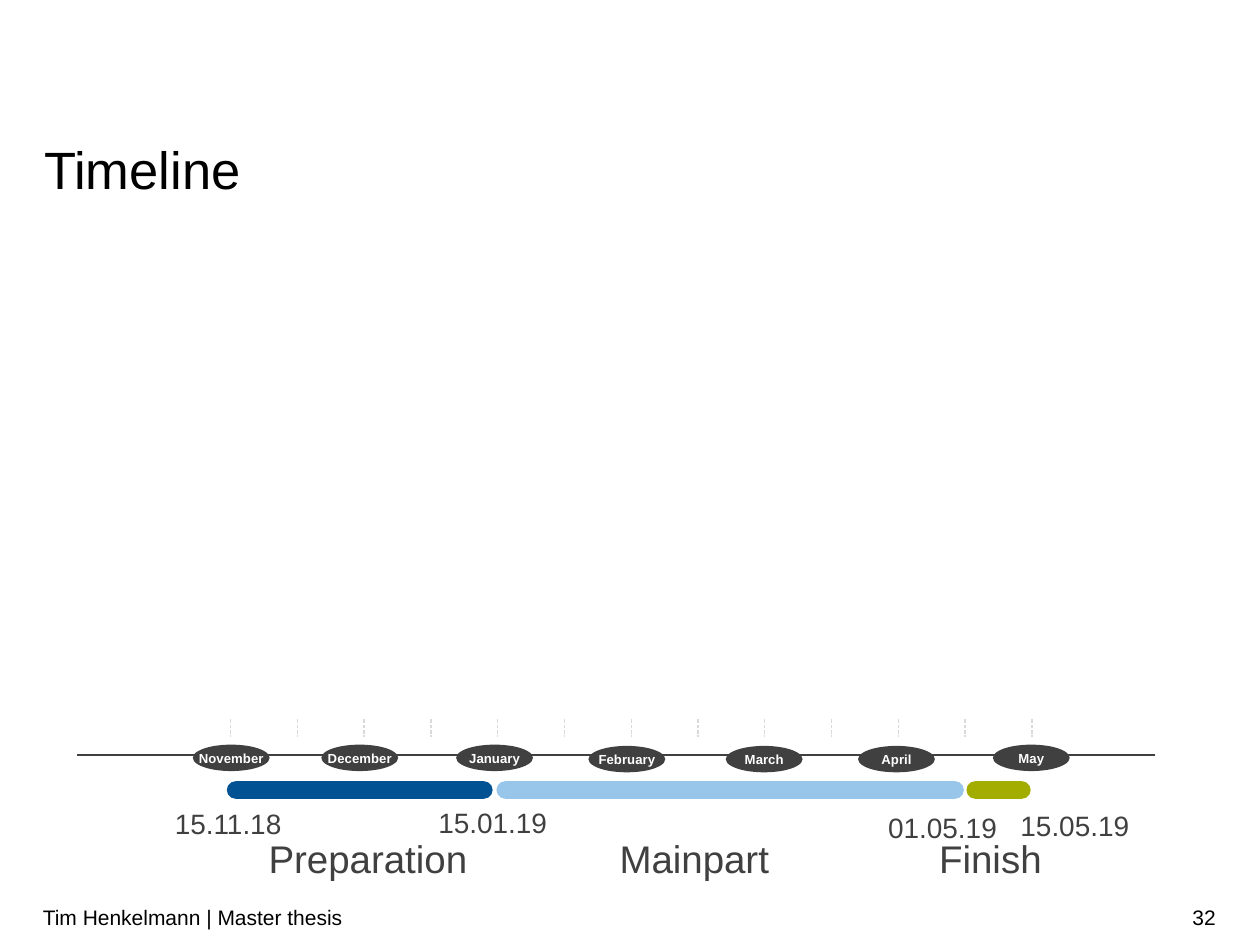
from lxml import etree
from pptx import Presentation
from pptx import util as u
from pptx.dml.color import RGBColor
from pptx.enum import dml, shapes, text
from pptx.oxml.ns import qn

DARK = RGBColor(0x40, 0x40, 0x40)
TICK_GREY = RGBColor(0xD9, 0xD9, 0xD9)
BLACK = RGBColor(0, 0, 0)
WHITE = RGBColor(0xFF, 0xFF, 0xFF)
BLUE = RGBColor(0x00, 0x52, 0x93)
LIGHT_BLUE = RGBColor(0x98, 0xC6, 0xEA)
GREEN = RGBColor(0xA2, 0xAD, 0x00)

FIRST_TICK = 1.83
HALF_MONTH = 0.53
TICK_COUNT = 13
TICK_TOP, TICK_BOTTOM = 5.71, 5.85
AXIS_ROW = 5.99
BAR_ROW, BAR_HEIGHT = 6.2, 0.14
PHASE_ROW = 6.63
FOOTER_ROW = 7.08
OVAL_WIDTH, OVAL_HEIGHT = 0.61, 0.21
LABEL_WIDTH, LABEL_HEIGHT = 0.55, 0.12

presentation = Presentation()
presentation.slide_width = u.Inches(10)
presentation.slide_height = u.Inches(7.5)
slide = presentation.slides.add_slide(presentation.slide_layouts[5])


def write(content, left, top, width, height, shape=None, size=16, color=DARK, bold=False,
          align=text.PP_ALIGN.CENTER, anchor=text.MSO_ANCHOR.TOP, inset=(0, 0), spacing=None):
    """Format the given shape, or a new text box; inset is (sides, top and bottom)."""
    box = [u.Inches(length) for length in (left, top, width, height)]
    if shape is None:
        shape = slide.shapes.add_textbox(*box)
    shape.left, shape.top, shape.width, shape.height = box
    frame = shape.text_frame
    frame.word_wrap = True
    frame.auto_size = text.MSO_AUTO_SIZE.NONE
    frame.vertical_anchor = anchor
    frame.margin_left = frame.margin_right = u.Inches(inset[0])
    frame.margin_top = frame.margin_bottom = u.Inches(inset[1])
    frame.text = content
    paragraph = frame.paragraphs[0]
    paragraph.alignment = align
    paragraph.line_spacing = spacing
    font = paragraph.runs[0].font
    font.name, font.size, font.bold = "Arial", u.Pt(size), bold
    font.color.rgb = color


def draw_line(start, end, color, width, dash=None):
    line = slide.shapes.add_connector(
        shapes.MSO_CONNECTOR.STRAIGHT, *[u.Inches(length) for length in (*start, *end)])
    line.line.color.rgb = color
    line.line.width = u.Pt(width)
    line.line.dash_style = dash
    etree.SubElement(line._element.spPr, qn("a:effectLst"))


write("Timeline", 0.25, 0.91, 9.31, 0.65, shape=slide.shapes.title, size=30, color=BLACK,
      align=text.PP_ALIGN.LEFT, inset=(0.1, 0.05), spacing=1.25)

# Axis with a tick every half month
draw_line((9.17, AXIS_ROW), (0.61, AXIS_ROW), DARK, 1.25)
for index in range(TICK_COUNT):
    column = FIRST_TICK + index * HALF_MONTH
    draw_line((column, TICK_TOP), (column, TICK_BOTTOM), TICK_GREY, 0.75,
              dml.MSO_LINE.SQUARE_DOT)

# Phase bars, phase names and month ovals
bars = [(1.8, 2.11, BLUE), (3.94, 3.71, LIGHT_BLUE), (7.67, 0.51, GREEN)]
months = [("November", 1.53, 5.91), ("December", 2.55, 5.91), ("January", 3.62, 5.91),
          ("February", 4.67, 5.92), ("March", 5.76, 5.92), ("April", 6.81, 5.92),
          ("May", 7.88, 5.91)]
fills = [(shapes.MSO_SHAPE.ROUNDED_RECTANGLE, left, BAR_ROW, width, BAR_HEIGHT, color)
         for left, width, color in bars]
fills += [(shapes.MSO_SHAPE.OVAL, left, top, OVAL_WIDTH, OVAL_HEIGHT, DARK)
          for _, left, top in months]
for kind, left, top, width, height, color in fills:
    shape = slide.shapes.add_shape(
        kind, *[u.Inches(length) for length in (left, top, width, height)])
    shape.shadow.inherit = False
    shape.fill.solid()
    shape.fill.fore_color.rgb = color
    shape.line.fill.background()
    if kind == shapes.MSO_SHAPE.ROUNDED_RECTANGLE:
        shape.adjustments[0] = 0.5

for month, left, top in months:
    write(month, left + (OVAL_WIDTH - LABEL_WIDTH) / 2, top + (OVAL_HEIGHT - LABEL_HEIGHT) / 2,
          LABEL_WIDTH, LABEL_HEIGHT, size=7.5, color=WHITE, bold=True,
          anchor=text.MSO_ANCHOR.MIDDLE)

for phase, left, width in [("Preparation", 2.03, 1.78), ("Mainpart", 4.8, 1.42),
                           ("Finish", 7.15, 1.42)]:
    write(phase, left, PHASE_ROW, width, 0.37, size=22)

for date, left, top in [("15.11.18", 1.35, 6.4), ("15.01.19", 3.45, 6.39),
                        ("01.05.19", 7.02, 6.43), ("15.05.19", 8.07, 6.42)]:
    write(date, left, top, 0.92, 0.2)

for footer, left, width, align in [
        ("Tim Henkelmann | Master thesis", 0.34, 7.07, text.PP_ALIGN.LEFT),
        ("32", 7.41, 2.24, text.PP_ALIGN.RIGHT)]:
    write(footer, left, FOOTER_ROW, width, 0.4, size=12, color=BLACK, align=align,
          anchor=text.MSO_ANCHOR.MIDDLE, inset=(0, 0.05))

presentation.save("out.pptx")
